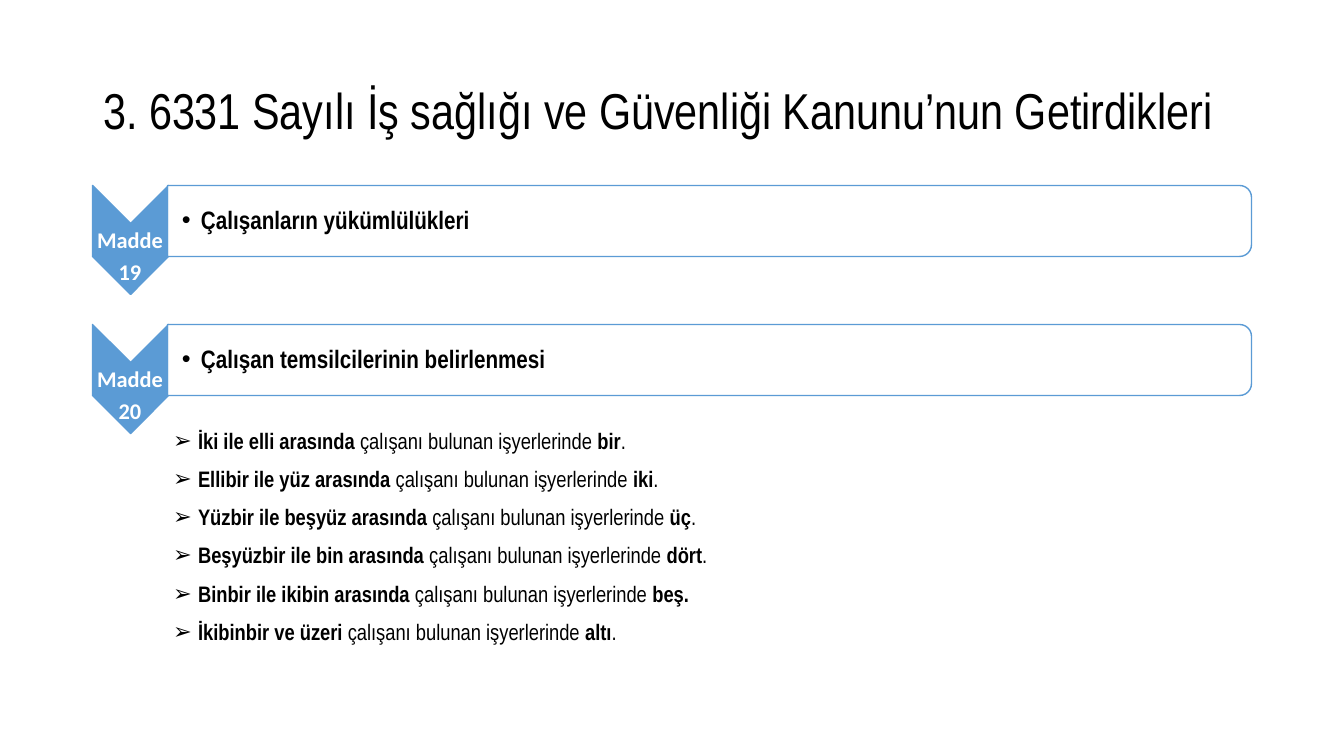
from lxml.etree import SubElement
from pptx import Presentation
from pptx.dml.color import RGBColor
from pptx.enum.shapes import MSO_SHAPE
from pptx.enum.text import MSO_ANCHOR, MSO_AUTO_SIZE, PP_ALIGN
from pptx.oxml.ns import qn
from pptx.util import Emu, Pt

PX = 914400 / 100.8
BLUE, WHITE, BLACK = "5B9BD5", "FFFFFF", "000000"
NARROW, LABEL_FONT = "Arial Narrow", "Calibri"
ROW_PITCH = 139
TITLE = "3. 6331 Sayılı İş sağlığı ve Güvenliği Kanunu’nun Getirdikleri"
ARTICLES = [
    ("19", "Çalışanların yükümlülükleri"),
    ("20", "Çalışan temsilcilerinin belirlenmesi"),
]
REPRESENTATIVES = [
    ("İki ile elli arasında", "bir", "."),
    ("Ellibir ile yüz arasında", "iki", "."),
    ("Yüzbir ile beşyüz arasında", "üç", "."),
    ("Beşyüzbir ile bin arasında", "dört", "."),
    ("Binbir ile ikibin arasında", "beş.", ""),
    ("İkibinbir ve üzeri", "altı", "."),
]


def px(length):
    """Turn pixels into EMU."""
    return Emu(round(length * PX))


def color(value):
    """Turn a hex string into a colour."""
    return RGBColor.from_string(value)


def place(shape, left, top, width, height):
    """Move and size a shape in pixels."""
    shape.left, shape.top = px(left), px(top)
    shape.width, shape.height = px(width), px(height)


def format_span(span, size, font, fill, bold=False):
    """Set the character format of one run."""
    span.font.size, span.font.name, span.font.bold = Pt(size), font, bold
    span.font.color.rgb = color(fill)


def set_bullet(para, char, indent):
    """Give a paragraph a bullet with a hanging indent in pixels."""
    properties = para._p.get_or_add_pPr()
    properties.set("marL", str(px(indent)))
    properties.set("indent", str(-px(indent)))
    SubElement(properties, qn("a:buFont")).set("typeface", "Arial")
    SubElement(properties, qn("a:buChar")).set("char", char)


def add_text(slide, area, lines, size, font, fill, left_inset=1):
    """Add a middle-anchored bold text box and return its paragraphs."""
    box = slide.shapes.add_textbox(*map(px, area))
    frame = box.text_frame
    frame.word_wrap = True
    frame.vertical_anchor = MSO_ANCHOR.MIDDLE
    frame.margin_left = px(left_inset)
    frame.margin_right = frame.margin_top = frame.margin_bottom = px(1)
    frame.text = "\n".join(lines)
    for para in frame.paragraphs:
        para.line_spacing = 0.9
        format_span(para.runs[0], size, font, fill, bold=True)
    return frame.paragraphs


def add_turned_shape(slide, kind, area, fill):
    """Add a blue-edged shape turned a quarter clockwise."""
    shape = slide.shapes.add_shape(kind, *map(px, area))
    shape.rotation = 90
    shape.shadow.inherit = False
    shape.fill.solid()
    shape.fill.fore_color.rgb = color(fill)
    shape.line.color.rgb = color(BLUE)
    shape.line.width = Pt(1)
    return shape


def add_article(slide, offset, number, subject):
    """Add one article: a chevron with its number and a panel."""
    add_turned_shape(slide, MSO_SHAPE.CHEVRON, (76, 202 + offset, 109, 76), BLUE)
    label = add_text(slide, (92, 227 + offset, 76, 60), ["Madde", number],
                     16, LABEL_FONT, WHITE)
    for para in label:
        para.alignment = PP_ALIGN.CENTER
    label[0].space_after = Pt(5.6)
    panel = add_turned_shape(slide, MSO_SHAPE.ROUND_2_SAME_RECTANGLE,
                             (674, -321 + offset, 71, 1084), WHITE)
    panel_color = panel.fill._xPr.find(qn("a:solidFill"))[0]
    SubElement(panel_color, qn("a:alpha")).set("val", "90000")
    text = add_text(slide, (168, 190 + offset, 1080, 63), [subject],
                    18, NARROW, BLACK, left_inset=14)
    set_bullet(text[0], "•", 19)


def fill_title(slide):
    """Write the title."""
    title = slide.shapes.title
    place(title, 93, 40, 1159, 146)
    frame = title.text_frame
    frame.text = TITLE
    frame.auto_size = MSO_AUTO_SIZE.NONE
    frame.vertical_anchor = MSO_ANCHOR.MIDDLE
    para = frame.paragraphs[0]
    para.alignment = PP_ALIGN.LEFT
    para.line_spacing = 0.9
    format_span(para.runs[0], 36, NARROW, BLACK)


def fill_list(slide):
    """Write how many representatives each workplace size needs."""
    body = slide.placeholders[1]
    place(body, 163, 425, 1089, 280)
    frame = body.text_frame
    frame.auto_size = MSO_AUTO_SIZE.NONE
    for index, (workers, count, ending) in enumerate(REPRESENTATIVES):
        para = frame.add_paragraph() if index else frame.paragraphs[0]
        para.line_spacing = 0.9
        para.space_before = Pt(10)
        set_bullet(para, "➢", 25)
        parts = [(workers, True), (" çalışanı bulunan işyerlerinde ", False),
                 (count, True), (ending, False)]
        for words, bold in parts:
            if words:
                span = para.add_run()
                span.text = words
                format_span(span, 16, NARROW, BLACK, bold)


def main():
    """Build and save the deck."""
    deck = Presentation()
    deck.slide_width, deck.slide_height = px(1344), px(756)
    page = deck.slides.add_slide(deck.slide_layouts[1])
    fill_title(page)
    fill_list(page)
    for row, (number, subject) in enumerate(ARTICLES):
        add_article(page, row * ROW_PITCH, number, subject)
    deck.save("out.pptx")


if __name__ == "__main__":
    main()
